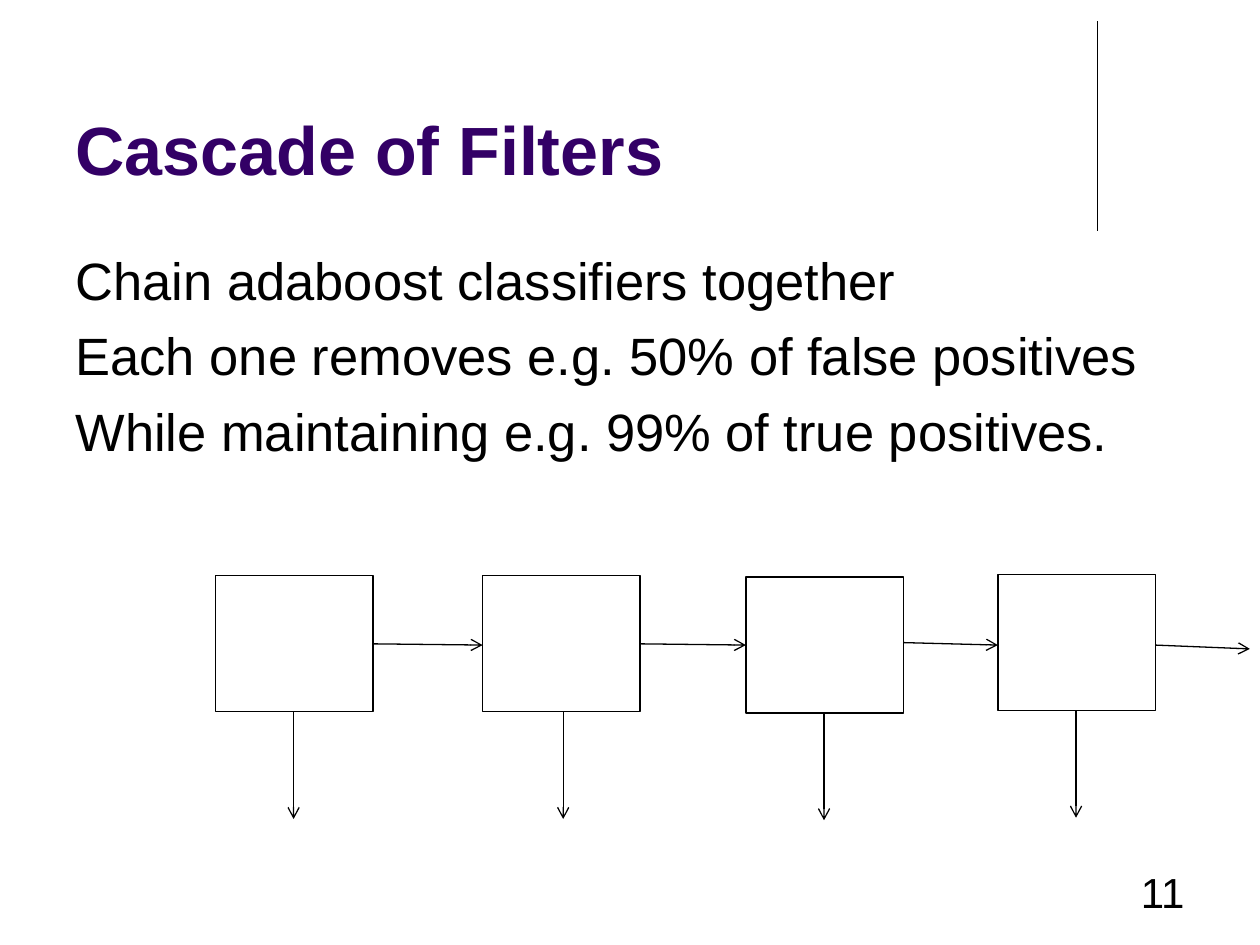
"""Build the slide on a cascade of filters."""
from lxml.etree import SubElement
from pptx import Presentation
from pptx.dml.color import RGBColor
from pptx.enum.shapes import MSO_CONNECTOR, MSO_SHAPE
from pptx.enum.text import MSO_ANCHOR, MSO_AUTO_SIZE, PP_ALIGN
from pptx.oxml.ns import qn
from pptx.util import Inches, Pt

PURPLE = RGBColor(0x33, 0x00, 0x66)
BLACK = RGBColor(0x00, 0x00, 0x00)
TITLE = "Cascade of Filters"
POINTS = [
    "Chain adaboost classifiers together",
    "Each one removes e.g. 50% of false positives",
    "While maintaining e.g. 99% of true positives.",
]
PAGE_NUMBER = "11"
FILTER_WIDTH, FILTER_HEIGHT, DROP = 1.25, 1.08, 0.85
FILTERS = [
    {"corner": (1.71, 4.57), "pass_y": (5.11, 5.12), "reject_x": 2.33},
    {"corner": (3.83, 4.57), "pass_y": (5.11, 5.12), "reject_x": 4.47},
    {"corner": (5.92, 4.58), "pass_y": (5.10, 5.12), "reject_x": 6.54},
    {"corner": (7.92, 4.56), "pass_y": (5.12, 5.15), "reject_x": 8.54},
]
CASCADE_END = 9.92


def place(shape, left, top, width, height):
    shape.left, shape.top = Inches(left), Inches(top)
    shape.width, shape.height = Inches(width), Inches(height)


def write(shape, lines, size, color=BLACK, bold=False, align=PP_ALIGN.LEFT,
          anchor=MSO_ANCHOR.TOP, gap=0, inset_top=0.05):
    frame = shape.text_frame
    frame.word_wrap = True
    frame.auto_size = MSO_AUTO_SIZE.NONE
    frame.vertical_anchor = anchor
    frame.margin_top = Inches(inset_top)
    frame.text = "\n".join(lines)
    for index, paragraph in enumerate(frame.paragraphs):
        paragraph.alignment = align
        paragraph.space_before = Pt(gap if index else 0)
        properties = paragraph._p.get_or_add_pPr()
        properties.set("marL", "0")
        properties.set("indent", "0")
        SubElement(properties, qn("a:buNone"))
        font = paragraph.font
        font.name, font.size, font.bold = "Arial", Pt(size), bold
        font.color.rgb = color


def draw_line(slide, start, end, arrow=True):
    line = slide.shapes.add_connector(
        MSO_CONNECTOR.STRAIGHT, *(Inches(value) for value in (*start, *end)))
    line.line.color.rgb = BLACK
    line.line.width = Pt(0.75)
    if arrow:
        SubElement(line.line._get_or_add_ln(), qn("a:tailEnd"), type="arrow")
    SubElement(line._element.spPr, qn("a:effectLst"))


def draw_filter(slide, corner):
    box = slide.shapes.add_shape(
        MSO_SHAPE.RECTANGLE,
        *(Inches(value) for value in (*corner, FILTER_WIDTH, FILTER_HEIGHT)))
    box.shadow.inherit = False
    box.fill.background()
    box.line.color.rgb = BLACK
    box.line.width = Pt(0.75)


def main():
    deck = Presentation()
    deck.slide_width, deck.slide_height = Inches(10), Inches(7.5)
    slide = deck.slides.add_slide(deck.slide_layouts[1])
    draw_line(slide, (8.71, 0.17), (8.71, 1.83), arrow=False)

    title, body = slide.placeholders
    place(title, 0.5, 0.13, 8.25, 1.42)
    write(title, [TITLE], 39, color=PURPLE, bold=True, anchor=MSO_ANCHOR.BOTTOM)
    place(body, 0.5, 1.88, 9, 4.82)
    write(body, POINTS, 30, gap=7, inset_top=0.09)
    page = slide.shapes.add_textbox(
        Inches(7.17), Inches(6.83), Inches(2.33), Inches(0.5))
    write(page, [PAGE_NUMBER], 24, align=PP_ALIGN.RIGHT)

    arrivals = [stage["corner"][0] for stage in FILTERS[1:]] + [CASCADE_END]
    for stage, arrival in zip(FILTERS, arrivals):
        left, top = stage["corner"]
        pass_start, pass_end = stage["pass_y"]
        bottom = top + FILTER_HEIGHT
        draw_filter(slide, stage["corner"])
        draw_line(slide, (left + FILTER_WIDTH, pass_start), (arrival, pass_end))
        draw_line(slide, (stage["reject_x"], bottom),
                  (stage["reject_x"], bottom + DROP))

    deck.save("out.pptx")


if __name__ == "__main__":
    main()
